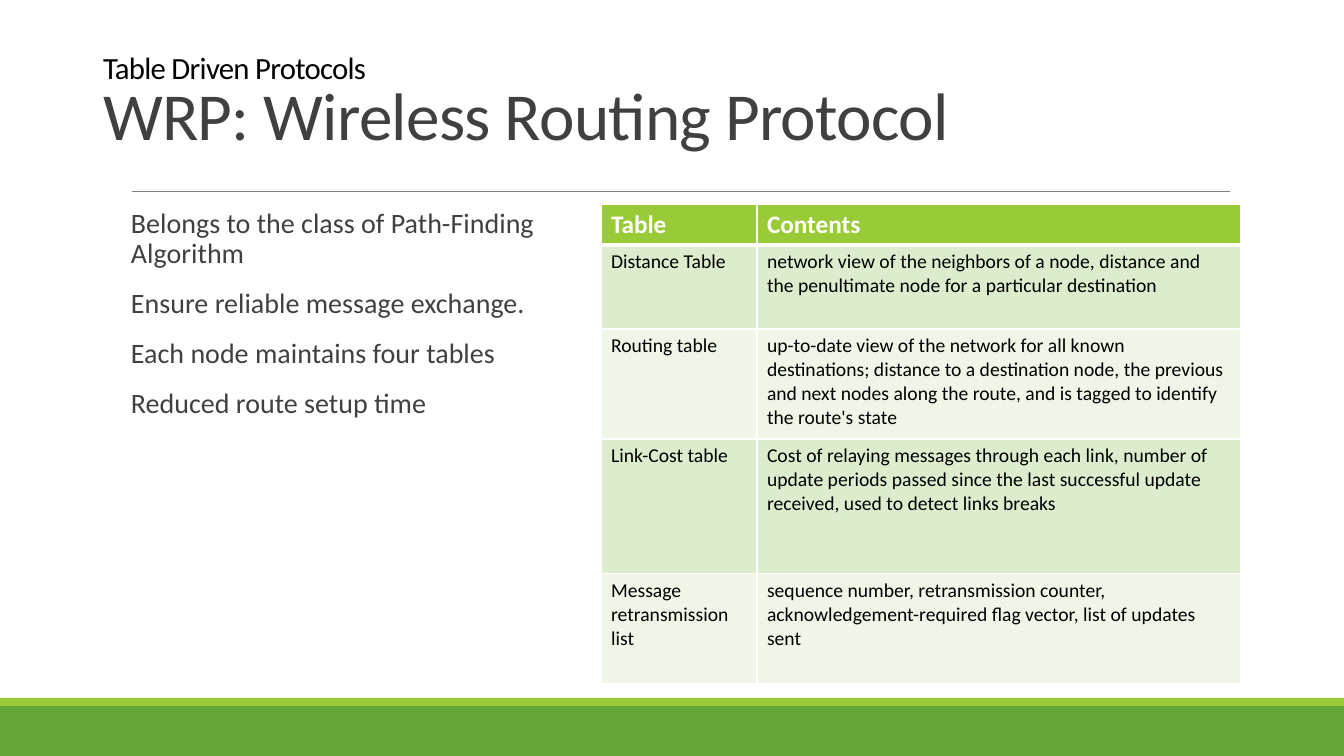
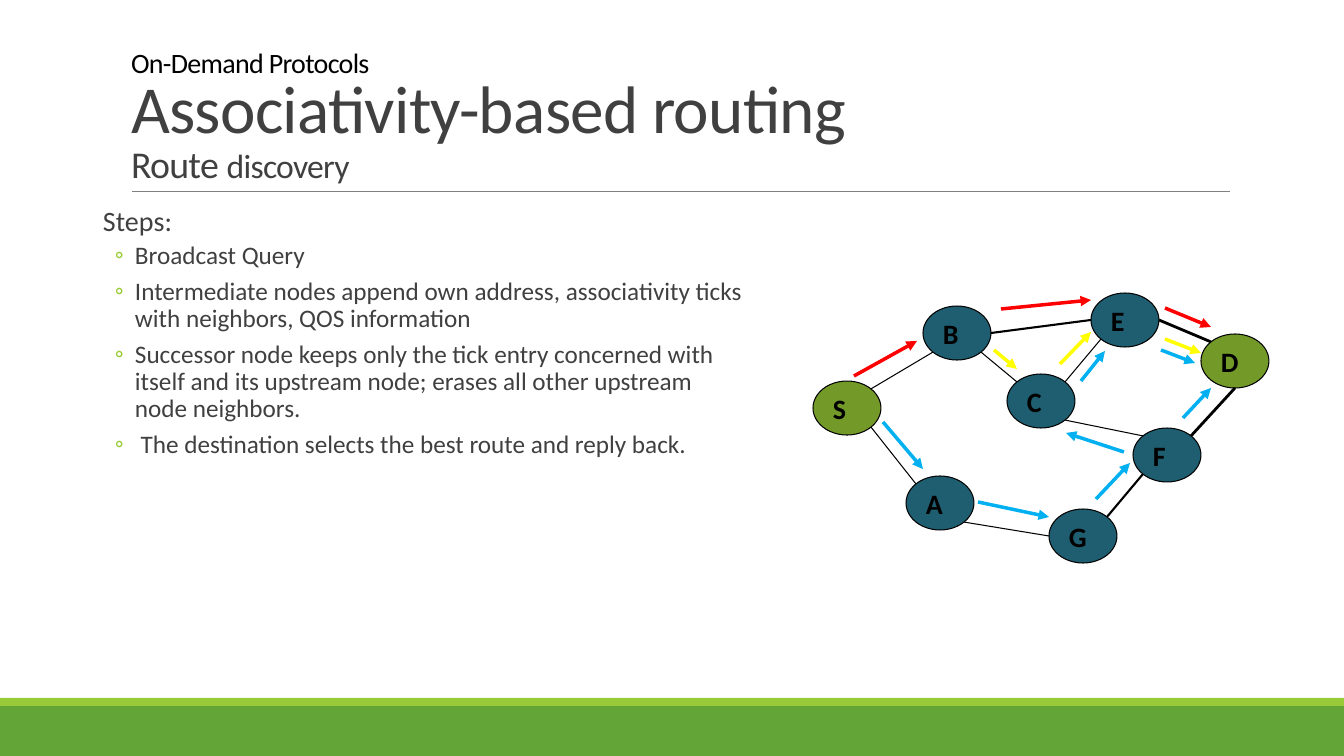
from copy import deepcopy
from math import sqrt
from typing import NamedTuple

from lxml.etree import SubElement
from pptx import Presentation
from pptx.dml.color import RGBColor
from pptx.enum.shapes import MSO_CONNECTOR, MSO_SHAPE
from pptx.enum.text import MSO_ANCHOR, MSO_AUTO_SIZE, PP_ALIGN
from pptx.oxml.ns import qn
from pptx.util import Pt

EMU_PER_PX = 914400 / 100.8
FONT = "Calibri"

BLACK = RGBColor(0x00, 0x00, 0x00)
WHITE = RGBColor(0xFF, 0xFF, 0xFF)
DARK_GRAY = RGBColor(0x40, 0x40, 0x40)
RULE_GRAY = RGBColor(0x80, 0x80, 0x80)
GREEN = RGBColor(0x63, 0xA5, 0x37)
LIME = RGBColor(0x99, 0xCB, 0x38)
PALE_GREEN = RGBColor(0xDE, 0xEC, 0xCE)
PALER_GREEN = RGBColor(0xEF, 0xF6, 0xE8)
OLIVE = RGBColor(0x73, 0x9A, 0x28)
TEAL = RGBColor(0x1E, 0x5E, 0x70)
RED = RGBColor(0xFF, 0x00, 0x00)
YELLOW = RGBColor(0xFF, 0xFF, 0x00)
BLUE = RGBColor(0x00, 0xB0, 0xF0)


class Box(NamedTuple):
    left: int
    top: int
    width: int
    height: int


class Point(NamedTuple):
    x: float
    y: float


class TitleRun(NamedTuple):
    text: str
    size: int
    color: RGBColor = DARK_GRAY
    breaks: bool = True


class BodyLine(NamedTuple):
    text: str
    level: int = 0


class LevelStyle(NamedTuple):
    size: int
    margin: int
    indent: int
    before: int
    after: int
    bullet: str


class Node(NamedTuple):
    left: int
    top: int
    fill: RGBColor = TEAL


class Link(NamedTuple):
    start: str
    start_site: str
    end: str
    end_site: str
    weight: float = 0.75


class Arrow(NamedTuple):
    start: Point
    end: Point
    color: RGBColor


LEVELS = (LevelStyle(20, 10, 0, 12, 2, ""), LevelStyle(18, 42, -20, 2, 4, "◦"))

NODE_WIDTH, NODE_HEIGHT = 68, 54
DIAGONAL = 1 / sqrt(2)
SITES = {
    "bottom": (0, 1), "left": (-1, 0), "right": (1, 0),
    "top left": (-DIAGONAL, -DIAGONAL), "top right": (DIAGONAL, -DIAGONAL),
    "bottom left": (-DIAGONAL, DIAGONAL), "bottom right": (DIAGONAL, DIAGONAL),
}
NODES = {
    "S": Node(813, 381, OLIVE), "B": Node(923, 306), "E": Node(1091, 293),
    "D": Node(1201, 334, OLIVE), "A": Node(906, 476), "C": Node(1007, 374),
    "F": Node(1133, 428), "G": Node(1049, 509),
}
LINKS = (
    Link("C", "top left", "B", "bottom right"),
    Link("S", "top right", "B", "bottom left"),
    Link("B", "right", "E", "left", 1.5),
    Link("C", "top right", "E", "bottom left"),
    Link("E", "right", "D", "top left", 2),
    Link("F", "top right", "D", "bottom", 2),
    Link("A", "bottom right", "G", "left"),
    Link("G", "top right", "F", "bottom left", 1.5),
    Link("S", "bottom right", "A", "top left"),
    Link("C", "bottom right", "F", "top left"),
)
ARROWS = (
    Arrow(Point(854, 376), Point(917, 341), RED),
    Arrow(Point(1001, 309), Point(1091, 300), RED),
    Arrow(Point(994, 350), Point(1017, 369), YELLOW),
    Arrow(Point(1165, 308), Point(1211, 327), RED),
    Arrow(Point(1060, 364), Point(1091, 332), YELLOW),
    Arrow(Point(1165, 339), Point(1201, 353), YELLOW),
    Arrow(Point(883, 422), Point(923, 469), BLUE),
    Arrow(Point(978, 502), Point(1049, 517), BLUE),
    Arrow(Point(1096, 499), Point(1130, 463), BLUE),
    Arrow(Point(1183, 418), Point(1211, 388), BLUE),
    Arrow(Point(1124, 452), Point(1066, 433), BLUE),
    Arrow(Point(1081, 381), Point(1105, 351), BLUE),
    Arrow(Point(1161, 350), Point(1195, 363), BLUE),
)

TABLE_COLUMNS = (156, 484)
TABLE_ROW_HEIGHTS = (41, 84, 110, 135, 110)
TABLE_ROWS = (
    ("Table", "Contents"),
    ("Distance Table", "network view of the neighbors of a node, distance and "
     "the penultimate node for a particular destination"),
    ("Routing table", "up-to-date view of the network for all known destinations; "
     "distance to a destination node, the previous and next nodes along the route, "
     "and is tagged to identify the route's state"),
    ("Link-Cost table", "Cost of relaying messages through each link, number of "
     "update periods passed since the last successful update received, used to "
     "detect links breaks"),
    ("Message retransmission list", "sequence number, retransmission counter, "
     "acknowledgement-required flag vector, list of updates sent"),
)


def px(length: float) -> int:
    return round(length * EMU_PER_PX)


def place(shape, box: Box) -> None:
    shape.left, shape.top, shape.width, shape.height = map(px, box)


def set_font(font, size: int, color: RGBColor, bold: bool = False) -> None:
    font.name, font.size, font.bold = FONT, Pt(size), bold
    font.color.rgb = color


def add_filled_shape(slide, kind: MSO_SHAPE, box: Box, fill: RGBColor):
    shape = slide.shapes.add_shape(kind, *map(px, box))
    shape.shadow.inherit = False
    shape.fill.solid()
    shape.fill.fore_color.rgb = fill
    shape.line.fill.background()
    return shape


def add_line(slide, start: Point, end: Point, color: RGBColor, weight: float,
             arrowhead: bool = False):
    connector = slide.shapes.add_connector(
        MSO_CONNECTOR.STRAIGHT, *map(px, (*start, *end)))
    connector.line.color.rgb = color
    connector.line.width = Pt(weight)
    properties = connector.element.spPr
    if arrowhead:
        SubElement(properties.find(qn("a:ln")), qn("a:tailEnd"), type="triangle")
    SubElement(properties, qn("a:effectLst"))
    return connector


def move_frame_to_layout(slide) -> None:
    """Draw the bands and title rule, then hand them to the shared layout."""
    layout = slide.slide_layout
    for placeholder in list(layout.placeholders):
        if placeholder.placeholder_format.idx >= 10:
            layout.shapes.element.remove(placeholder.element)
    frame = (
        add_filled_shape(slide, MSO_SHAPE.RECTANGLE, Box(0, 706, 1344, 50), GREEN),
        add_filled_shape(slide, MSO_SHAPE.RECTANGLE, Box(0, 698, 1344, 8), LIME),
        add_line(slide, Point(132, 191), Point(1230, 191), RULE_GRAY, 0.5),
    )
    for shape in frame:
        layout.shapes.element.append(shape.element)


def fill_title(slide, box: Box, runs: tuple[TitleRun, ...]) -> None:
    title = slide.shapes.title
    place(title, box)
    frame = title.text_frame
    frame.auto_size = MSO_AUTO_SIZE.NONE
    frame.vertical_anchor = MSO_ANCHOR.BOTTOM
    paragraph = frame.paragraphs[0]
    paragraph.alignment = PP_ALIGN.LEFT
    paragraph.line_spacing = 0.85
    for title_run in runs:
        run = paragraph.add_run()
        run.text = title_run.text
        set_font(run.font, title_run.size, title_run.color)
        properties = run._r.get_or_add_rPr()
        properties.set("spc", "-50")
        if title_run.breaks:
            paragraph.add_line_break()
            paragraph._p[-1].append(deepcopy(properties))


def fill_body(slide, box: Box, lines: tuple[BodyLine, ...]) -> None:
    body = slide.placeholders[1]
    place(body, box)
    frame = body.text_frame
    frame.auto_size = MSO_AUTO_SIZE.NONE
    frame.margin_left = frame.margin_right = 0
    for index, line in enumerate(lines):
        style = LEVELS[line.level]
        paragraph = frame.add_paragraph() if index else frame.paragraphs[0]
        paragraph.text = line.text
        paragraph.level = line.level
        paragraph.line_spacing = 0.9
        paragraph.space_before = Pt(style.before if index else 0)
        paragraph.space_after = Pt(style.after)
        properties = paragraph._p.get_or_add_pPr()
        properties.set("marL", str(px(style.margin)))
        properties.set("indent", str(px(style.indent)))
        if style.bullet:
            color = SubElement(properties, qn("a:buClr"))
            SubElement(color, qn("a:srgbClr"), val=str(LIME))
            SubElement(properties, qn("a:buFont"), typeface=FONT)
            SubElement(properties, qn("a:buChar"), char=style.bullet)
        else:
            SubElement(properties, qn("a:buNone"))
        set_font(paragraph.font, style.size, DARK_GRAY)


def set_white_borders(cell, top: int, bottom: int) -> None:
    properties = cell._tc.get_or_add_tcPr()
    for side, weight in (("L", 1), ("R", 1), ("T", top), ("B", bottom)):
        border = SubElement(properties, qn(f"a:ln{side}"), w=str(Pt(weight)))
        fill = SubElement(border, qn("a:solidFill"))
        SubElement(fill, qn("a:srgbClr"), val=str(WHITE))


def add_protocol_table(slide) -> None:
    box = Box(601, 204, sum(TABLE_COLUMNS), sum(TABLE_ROW_HEIGHTS))
    table = slide.shapes.add_table(
        len(TABLE_ROWS), len(TABLE_COLUMNS), *map(px, box)).table
    table.horz_banding = False
    for column, width in zip(table.columns, TABLE_COLUMNS):
        column.width = px(width)
    for index, (row, height) in enumerate(zip(table.rows, TABLE_ROW_HEIGHTS)):
        row.height = px(height)
        header = index == 0
        band = LIME if header else PALE_GREEN if index % 2 else PALER_GREEN
        for cell, text in zip(row.cells, TABLE_ROWS[index]):
            set_white_borders(cell, 3 if index == 1 else 1, 3 if header else 1)
            cell.fill.solid()
            cell.fill.fore_color.rgb = band
            cell.text = text
            set_font(cell.text_frame.paragraphs[0].font, 18 if header else 14,
                     WHITE if header else BLACK, header)


def site_point(name: str, site: str) -> Point:
    node, (across, down) = NODES[name], SITES[site]
    return Point(node.left + NODE_WIDTH / 2 * (1 + across),
                 node.top + NODE_HEIGHT / 2 * (1 + down))


def add_network(slide) -> None:
    for name, node in NODES.items():
        box = Box(node.left, node.top, NODE_WIDTH, NODE_HEIGHT)
        shape = add_filled_shape(slide, MSO_SHAPE.OVAL, box, node.fill)
        shape.line.color.rgb = BLACK
        shape.line.width = Pt(0.75)
        frame = shape.text_frame
        frame.vertical_anchor = MSO_ANCHOR.MIDDLE
        paragraph = frame.paragraphs[0]
        paragraph.text = name
        paragraph.alignment = PP_ALIGN.LEFT
        set_font(paragraph.font, 20, BLACK, True)
    for link in LINKS:
        add_line(slide, site_point(link.start, link.start_site),
                 site_point(link.end, link.end_site), BLACK, link.weight)
    for arrow in ARROWS:
        add_line(slide, arrow.start, arrow.end, arrow.color, 2.5, arrowhead=True)


def main() -> None:
    presentation = Presentation()
    presentation.slide_width, presentation.slide_height = px(1344), px(756)
    layout = presentation.slide_layouts[1]

    slide = presentation.slides.add_slide(layout)
    move_frame_to_layout(slide)
    fill_title(slide, Box(93, 13, 1159, 146), (
        TitleRun("Table Driven Protocols", 22, BLACK),
        TitleRun("WRP: Wireless Routing Protocol", 48, breaks=False)))
    fill_body(slide, Box(121, 204, 478, 444), (
        BodyLine("Belongs to the class of Path-Finding Algorithm"),
        BodyLine("Ensure reliable message exchange."),
        BodyLine("Each node maintains four tables"),
        BodyLine("Reduced route setup time")))
    add_protocol_table(slide)

    slide = presentation.slides.add_slide(layout)
    fill_title(slide, Box(121, 31, 1109, 160), (
        TitleRun("On-Demand Protocols", 20, BLACK),
        TitleRun("Associativity-based routing", 48),
        TitleRun("Route ", 27, breaks=False),
        TitleRun("discovery", 24, breaks=False)))
    fill_body(slide, Box(93, 202, 651, 480), (
        BodyLine("Steps:"),
        BodyLine("Broadcast Query", 1),
        BodyLine("Intermediate nodes append own address, associativity ticks "
                 "with neighbors, QOS information", 1),
        BodyLine("Successor node keeps only the tick entry concerned with itself "
                 "and its upstream node; erases all other upstream node neighbors.", 1),
        BodyLine(" The destination selects the best route and reply back.", 1)))
    add_network(slide)

    presentation.save("out.pptx")


if __name__ == "__main__":
    main()
